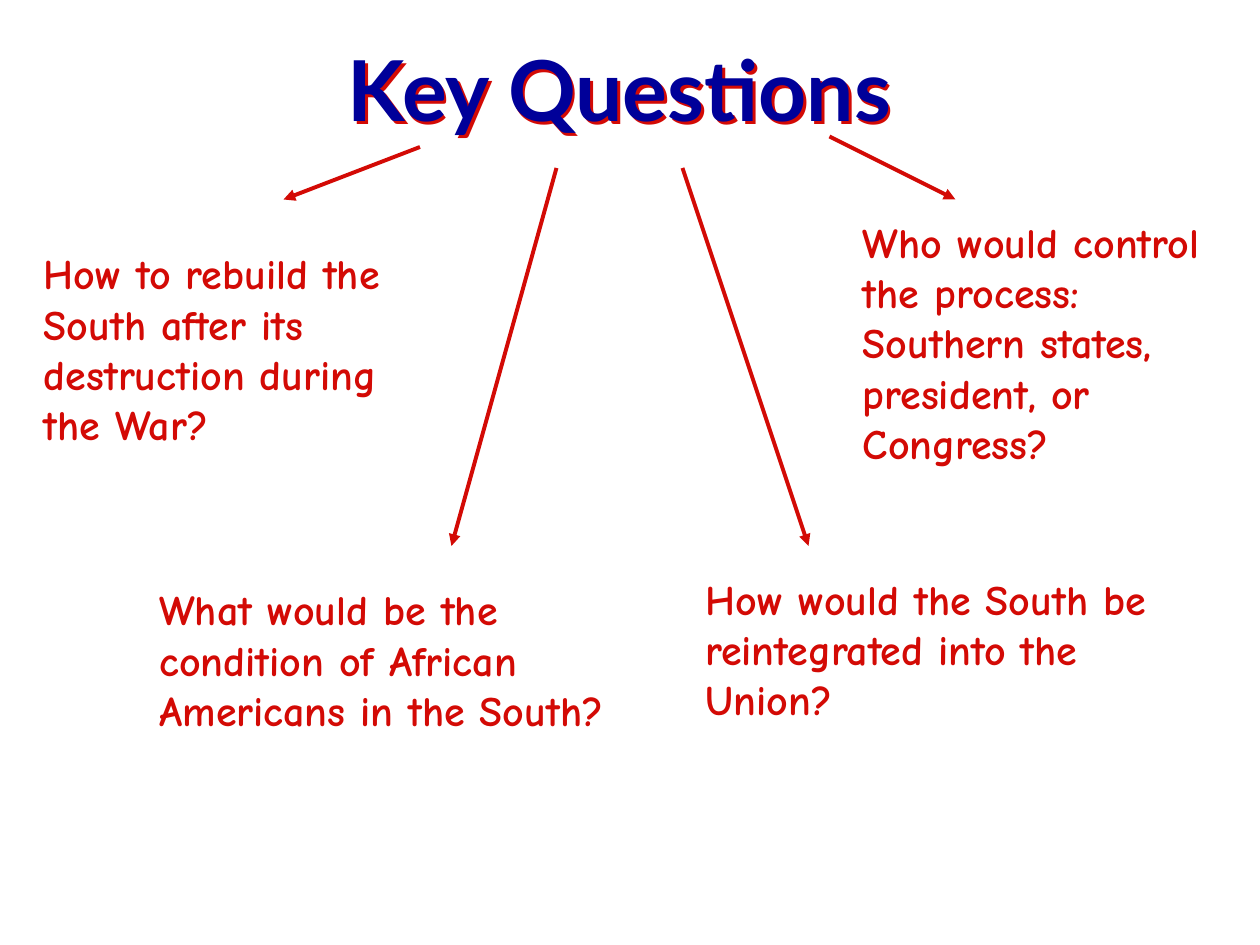
from dataclasses import dataclass, field

from lxml.etree import SubElement
from pptx import Presentation
from pptx.dml.color import RGBColor
from pptx.enum.shapes import MSO_CONNECTOR
from pptx.enum.text import MSO_ANCHOR, PP_ALIGN
from pptx.oxml.ns import qn
from pptx.util import Inches, Pt

COLS, ROWS = 120, 90  # slide grid, twelve units to the inch


@dataclass(frozen=True)
class Theme:
    navy: str = "000099"
    red: str = "D30A05"
    line_width: float = 2.25
    title: dict = field(default_factory=lambda: {
        "name": "Lato", "size": Pt(48), "bold": True})
    body: dict = field(default_factory=lambda: {
        "name": "Comic Neue", "size": Pt(24), "bold": True})


THEME = Theme()

# text, text box (left, top, width, height), arrow start, arrow end
QUESTIONS = [
    ("How to rebuild the South after its destruction during the War?",
     (3, 23, 36, 20.4), (40, 14), (27, 19)),
    ("What would be the condition of African Americans in the South?",
     (14, 55, 46, 20.4), (53, 16), (43, 52)),
    ("How would the South be reintegrated into the Union?",
     (66, 54, 45, 15.6), (65, 16), (77, 52)),
    ("Who would control the process: Southern states, president, or Congress?",
     (81, 20, 36, 30), (79, 13), (91, 19)),
]


def grid(*units):
    return [Inches(u / 12) for u in units]


def add_text(slide, box, text, font, color, align=PP_ALIGN.LEFT):
    sp = slide.shapes.add_textbox(*grid(*box))
    tf = sp.text_frame
    tf.word_wrap = True
    tf.vertical_anchor = MSO_ANCHOR.TOP
    p = tf.paragraphs[0]
    p.alignment = align
    r = p.add_run()
    r.text = text
    for name, value in font.items():
        setattr(r.font, name, value)
    r.font.color.rgb = RGBColor.from_string(color)
    return sp


def add_title(slide, box, text):
    """Centred heading whose letters cast a hard red shadow."""
    sp = add_text(slide, box, text, THEME.title, THEME.navy, PP_ALIGN.CENTER)
    effects = SubElement(sp.element.spPr, qn("a:effectLst"))
    shadow = SubElement(effects, qn("a:outerShdw"), dist=str(Pt(2)),
                        dir="2700000", algn="ctr", rotWithShape="0")
    SubElement(shadow, qn("a:srgbClr"), val=THEME.red)


def add_arrow(slide, start, end):
    cx = slide.shapes.add_connector(MSO_CONNECTOR.STRAIGHT, *grid(*start, *end))
    cx.line.width = Pt(THEME.line_width)
    cx.line.color.rgb = RGBColor.from_string(THEME.red)
    SubElement(cx.line._get_or_add_ln(), qn("a:tailEnd"), type="triangle")
    SubElement(cx.element.spPr, qn("a:effectLst"))


def add_question(slide, box, text):
    add_text(slide, box, text, THEME.body, THEME.red)


def main():
    prs = Presentation()
    prs.slide_width, prs.slide_height = grid(COLS, ROWS)
    slide = prs.slides.add_slide(prs.slide_layouts[6])
    add_title(slide, (4, 3, 110, 10.8), "Key Questions")
    for _, _, start, end in QUESTIONS:
        add_arrow(slide, start, end)
    for text, box, _, _ in QUESTIONS:
        add_question(slide, box, text)
    prs.save("out.pptx")


if __name__ == "__main__":
    main()
